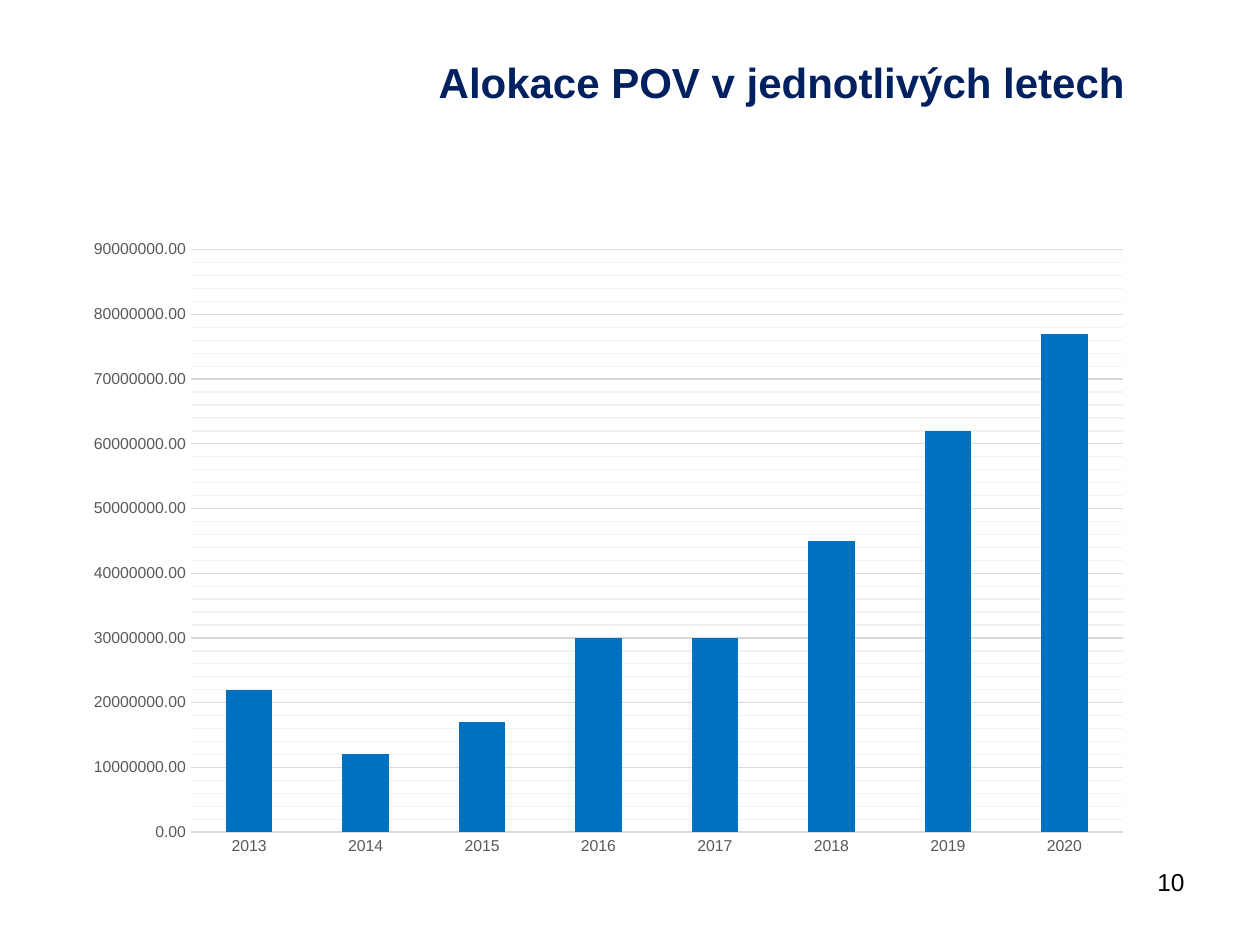
from copy import deepcopy

from lxml.etree import SubElement
from pptx import Presentation
from pptx.chart.data import CategoryChartData
from pptx.dml.color import RGBColor
from pptx.enum.chart import XL_CHART_TYPE, XL_TICK_MARK
from pptx.enum.text import MSO_ANCHOR, PP_ALIGN
from pptx.oxml.ns import qn
from pptx.util import Inches, Pt

COLORS = {
    "title": "002060",
    "text": "000000",
    "axis": "595959",
    "bar": "0070C0",
    "major": "D9D9D9",
    "minor": "F2F2F2",
}
FONT = "Arial"
WIDTH, HEIGHT = Inches(10), Inches(7.5)
ALLOCATIONS = {
    "2013": 22_000_000,
    "2014": 12_000_000,
    "2015": 17_000_000,
    "2016": 30_000_000,
    "2017": 30_000_000,
    "2018": 45_000_000,
    "2019": 62_000_000,
    "2020": 77_000_000,
}
PLOT_AREA = {"x": 0.11, "y": 0.03, "w": 0.87, "h": 0.91}


def color(name):
    """Return the named colour of the palette."""
    return RGBColor.from_string(COLORS[name])


def format_font(font, size, color_name, bold=False):
    """Apply the slide's typeface with a size, colour and weight."""
    font.name = FONT
    font.size = Pt(size)
    font.bold = bold
    font.color.rgb = color(color_name)


def write_text(shape, text, size, color_name, bold=False,
               align=PP_ALIGN.LEFT, anchor=MSO_ANCHOR.TOP):
    """Fill a shape with one formatted paragraph."""
    frame = shape.text_frame
    frame.word_wrap = True
    frame.vertical_anchor = anchor
    paragraph = frame.paragraphs[0]
    paragraph.alignment = align
    run = paragraph.add_run()
    run.text = text
    format_font(run.font, size, color_name, bold)


def add_title(slide, left, top, width, height):
    """Move the title placeholder into its box and fill it."""
    title = slide.shapes.title
    title.left, title.top, title.width, title.height = left, top, width, height
    write_text(title, "Alokace POV v jednotlivých letech", size=24,
               color_name="title", bold=True, align=PP_ALIGN.CENTER,
               anchor=MSO_ANCHOR.MIDDLE)


def add_page_number(slide, left, top, width, height):
    """Place the right-aligned page number."""
    box = slide.shapes.add_textbox(left, top, width, height)
    write_text(box, "10", size=14, color_name="text", align=PP_ALIGN.RIGHT)


def format_axis(axis):
    """Give an axis grey labels without ticks or a line."""
    axis.major_tick_mark = axis.minor_tick_mark = XL_TICK_MARK.NONE
    axis.format.line.fill.background()
    format_font(axis.tick_labels.font, 9, "axis")


def format_gridlines(axis):
    """Draw thin major gridlines and paler minor ones."""
    axis.has_major_gridlines = axis.has_minor_gridlines = True
    line = axis.major_gridlines.format.line
    line.width = Pt(0.75)
    line.color.rgb = color("major")
    major = axis._element.find(qn("c:majorGridlines"))
    minor = axis._element.find(qn("c:minorGridlines"))
    properties = deepcopy(major.find(qn("c:spPr")))
    properties.find(".//" + qn("a:srgbClr")).set("val", COLORS["minor"])
    minor.append(properties)


def set_plot_area(chart, shares):
    """Fix the inner plot area as shares of the chart's box."""
    plot_area = chart.plots[0]._element.getparent()
    layout = plot_area.find(qn("c:layout"))
    if layout is None:
        layout = SubElement(plot_area, qn("c:layout"))
        plot_area.insert(0, layout)
    manual = SubElement(layout, qn("c:manualLayout"))
    settings = {"layoutTarget": "inner", "xMode": "edge", "yMode": "edge", **shares}
    for name, value in settings.items():
        SubElement(manual, qn(f"c:{name}")).set("val", str(value))


def add_allocation_chart(slide, left, top, width, height):
    """Add the column chart of yearly allocations."""
    data = CategoryChartData(number_format="0.00")
    data.categories = list(ALLOCATIONS)
    data.add_series("Series 1", list(ALLOCATIONS.values()))
    chart = slide.shapes.add_chart(
        XL_CHART_TYPE.COLUMN_CLUSTERED, left, top, width, height, data).chart
    chart.has_legend = False
    chart.has_title = False
    format_font(chart.font, 10, "text")
    set_plot_area(chart, PLOT_AREA)

    plot = chart.plots[0]
    plot.gap_width = 150
    plot.vary_by_categories = False
    fill = plot.series[0].format.fill
    fill.solid()
    fill.fore_color.rgb = color("bar")

    format_axis(chart.category_axis)
    axis = chart.value_axis
    format_axis(axis)
    format_gridlines(axis)
    axis.minimum_scale, axis.maximum_scale = 0, 90_000_000
    axis.major_unit, axis.minor_unit = 10_000_000, 2_000_000
    axis.tick_labels.number_format = "0.00"
    axis.tick_labels.number_format_is_linked = False


def main():
    """Build and save the presentation."""
    presentation = Presentation()
    presentation.slide_width, presentation.slide_height = WIDTH, HEIGHT
    slide = presentation.slides.add_slide(presentation.slide_layouts[5])
    add_page_number(slide, Inches(7.17), Inches(6.83), Inches(2.33), Inches(0.52))
    add_title(slide, Inches(2.58), 0, Inches(7.25), Inches(1.3))
    add_allocation_chart(slide, Inches(0.58), Inches(1.83), Inches(8.5), Inches(5.08))
    presentation.save("out.pptx")


if __name__ == "__main__":
    main()
